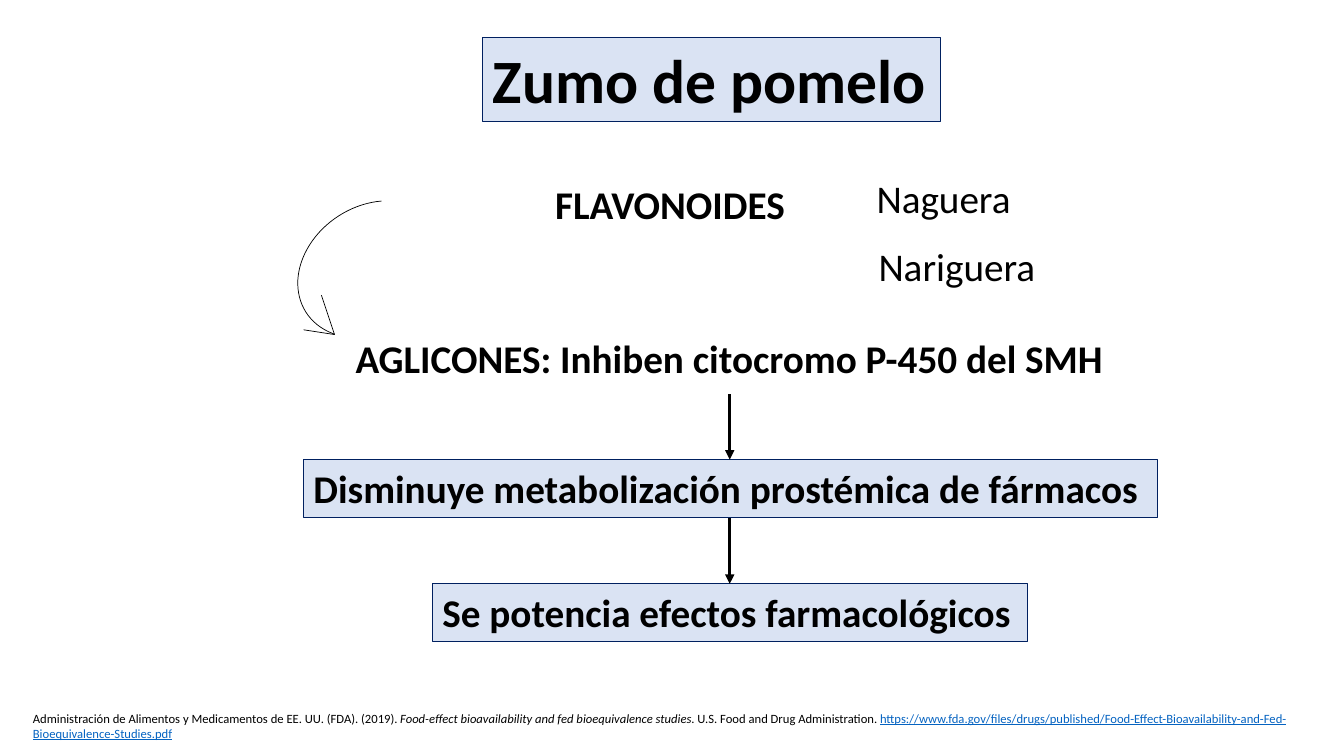
from lxml.etree import SubElement
from pptx import Presentation
from pptx.dml.color import RGBColor
from pptx.enum.shapes import MSO_CONNECTOR as Connector, MSO_SHAPE as Shape
from pptx.enum.text import MSO_AUTO_SIZE as AutoSize
from pptx.oxml.ns import qn
from pptx.util import Cm, Pt

BLACK = RGBColor(0x00, 0x00, 0x00)
NAVY = RGBColor(0x00, 0x20, 0x60)
PALE_BLUE = RGBColor(0xDA, 0xE3, 0xF3)
LINK_BLUE = RGBColor(0x05, 0x63, 0xC1)

BASE = {"name": "Calibri", "size": Pt(28)}
BOLD = {**BASE, "bold": True}
TITLE = {**BOLD, "size": Pt(44)}
SMALL = {**BASE, "size": Pt(9)}

ROW_HEIGHT = 1.45
FLOW_X = 18.39


def add_text(page, place, spans, wrap=False):
    box = page.shapes.add_textbox(*map(Cm, place))
    frame = box.text_frame
    frame.word_wrap = wrap
    frame.auto_size = AutoSize.SHAPE_TO_FIT_TEXT
    para = frame.paragraphs[0]
    for text, formats, color in spans:
        span = para.add_run()
        span.text = text
        for key, value in formats.items():
            setattr(span.font, key, value)
        span.font.color.rgb = color
    return box


def add_panel(page, place, text, formats):
    box = add_text(page, place, [(text, formats, BLACK)], wrap=True)
    box.fill.solid()
    box.fill.fore_color.rgb = PALE_BLUE
    box.line.color.rgb = NAVY
    box.line.width = Pt(0.75)


def add_line(page, start, end, width, arrow=False):
    line = page.shapes.add_connector(Connector.STRAIGHT, *map(Cm, start + end))
    line.line.color.rgb = BLACK
    line.line.width = Pt(width)
    properties = line._element.spPr
    if arrow:
        SubElement(properties.find(qn("a:ln")), qn("a:tailEnd"), type="triangle")
    SubElement(properties, qn("a:effectLst"))


def add_curved_arrow(page):
    arc = page.shapes.add_shape(Shape.ARC, Cm(7.8), Cm(4.78), Cm(3.2), Cm(4.01))
    arc.adjustments[0] = 145.9
    arc.adjustments[1] = 23.87
    arc.rotation = 237.3
    arc.shadow.inherit = False
    arc.fill.background()
    arc.line.color.rgb = BLACK
    arc.line.width = Pt(0.5)
    tip = (8.43, 8.43)
    for barb in ((7.65, 8.31), (8.1, 7.44)):
        add_line(page, barb, tip, 0.5)


def add_reference(page):
    add_text(page, (0.58, 17.78, 32.44, 1.02), [
        ("Administración de Alimentos y Medicamentos de EE. UU. (FDA). (2019). ", SMALL, BLACK),
        ("Food-effect bioavailability and fed bioequivalence studies",
         {**SMALL, "italic": True}, BLACK),
        (". U.S. Food and Drug Administration. ", SMALL, BLACK),
        ("https://www.fda.gov/files/drugs/published/"
         "Food-Effect-Bioavailability-and-Fed-Bioequivalence-Studies.pdf",
         {**SMALL, "underline": True}, LINK_BLUE),
    ], wrap=True)


def main():
    deck = Presentation()
    deck.slide_width, deck.slide_height = Cm(33.87), Cm(19.05)
    page = deck.slides.add_slide(deck.slide_layouts[6])

    add_panel(page, (12.17, 0.94, 11.53, 2.13), "Zumo de pomelo", TITLE)
    for left, top, width, text in (
        (7.65, 11.58, 21.51, "Disminuye metabolización prostémica de fármacos"),
        (10.9, 14.71, 14.99, "Se potencia efectos farmacológicos"),
    ):
        add_panel(page, (left, top, width, ROW_HEIGHT), text, BOLD)
        add_line(page, (FLOW_X, top - 1.65), (FLOW_X, top), 2.25, arrow=True)

    for left, top, width, text, formats in (
        (13.74, 4.42, 6.38, "FLAVONOIDES", BOLD),
        (8.71, 8.31, 19.58, "AGLICONES: Inhiben citocromo P-450 del SMH", BOLD),
        (21.84, 4.27, 3.94, "Naguera", BASE),
        (21.89, 5.99, 4.5, "Nariguera", BASE),
    ):
        add_text(page, (left, top, width, ROW_HEIGHT), [(text, formats, BLACK)])

    add_curved_arrow(page)
    add_reference(page)
    deck.save("out.pptx")


if __name__ == "__main__":
    main()
